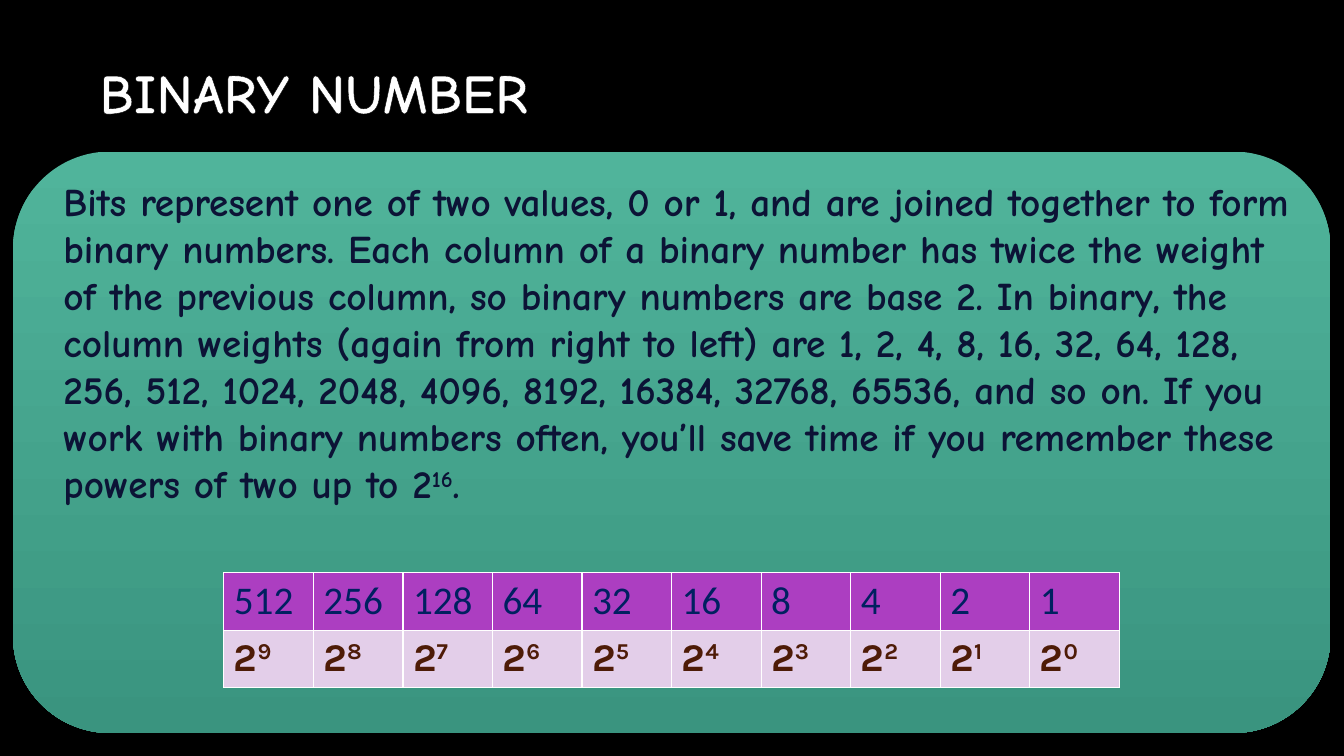
from typing import NamedTuple

from lxml.etree import SubElement
from pptx import Presentation
from pptx.dml.color import RGBColor as Rgb
from pptx.enum.shapes import MSO_SHAPE as Preset
from pptx.enum.text import MSO_ANCHOR as Anchor
from pptx.oxml.ns import qn
from pptx.util import Cm, Pt

COLORS = {
    "black": "000000",
    "white": "FFFFFF",
    "panel_top": "50B49B",
    "panel_bottom": "3A947F",
    "body": "0C1336",
    "weight": "002060",
    "weight_fill": "AC3EC1",
    "power": "4E1B07",
    "power_fill": "E3CEE9",
}
BIT_COUNT = 10
BODY = (
    "Bits represent one of two values, 0 or 1, and are joined together to form "
    "binary numbers. Each column of a binary number has twice the weight of the "
    "previous column, so binary numbers are base 2. In binary, the column weights "
    "(again from right to left) are 1, 2, 4, 8, 16, 32, 64, 128, 256, 512, 1024, "
    "2048, 4096, 8192, 16384, 32768, 65536, and so on. If you work with binary "
    "numbers often, you’ll save time if you remember these powers of two up to 2"
)


class Span(NamedTuple):
    text: str
    raised: bool = False


class Style(NamedTuple):
    font: str
    size: int
    color: str
    bold: bool


class Frame(NamedTuple):
    left: float
    top: float
    width: float
    height: float


class Row(NamedTuple):
    height: float
    fill: str
    style: Style
    cells: list[list[Span]]


TITLE_STYLE = Style("Comic Neue", 40, "white", True)
BODY_STYLE = Style("Comic Neue", 28, "body", True)
WEIGHT_STYLE = Style("Calibri", 28, "weight", False)
POWER_STYLE = Style("Karla", 28, "power", True)


def color(name: str) -> Rgb:
    return Rgb.from_string(COLORS[name])


def lengths(frame: Frame) -> list[Cm]:
    return [Cm(value) for value in frame]


def write(para, spans: list[Span], style: Style) -> None:
    font = para.font
    font.name, font.size, font.bold = style.font, Pt(style.size), style.bold
    font.color.rgb = color(style.color)
    for span in spans:
        run = para.add_run()
        run.text = span.text
        if span.raised:
            run._r.get_or_add_rPr().set("baseline", "30000")


def add_line(parent, tag: str, name: str, width: float) -> None:
    line = SubElement(parent, qn(tag), w=str(Pt(width)))
    SubElement(SubElement(line, qn("a:solidFill")), qn("a:srgbClr"), val=COLORS[name])


def add_panel(page, frame: Frame) -> None:
    panel = page.shapes.add_shape(Preset.ROUNDED_RECTANGLE, *lengths(frame))
    panel.shadow.inherit = False
    panel.line.fill.background()
    panel.fill.gradient()
    panel.fill.gradient_angle = 270
    for stop, name in zip(panel.fill.gradient_stops, ("panel_top", "panel_bottom")):
        stop.color.rgb = color(name)


def add_text(page, frame: Frame, spans: list[Span], style: Style, anchor: Anchor):
    text = page.shapes.add_textbox(*lengths(frame)).text_frame
    text.word_wrap = True
    text.vertical_anchor = anchor
    write(text.paragraphs[0], spans, style)
    return text.paragraphs[0]


def add_grid(page, frame: Frame, rows: list[Row]) -> None:
    grid = page.shapes.add_table(len(rows), BIT_COUNT, *lengths(frame)).table
    grid.first_row = grid.horz_banding = False
    for row_index, row in enumerate(rows):
        grid.rows[row_index].height = Cm(row.height)
        for column, spans in enumerate(row.cells):
            cell = grid.cell(row_index, column)
            write(cell.text_frame.paragraphs[0], spans, row.style)
            for side in ("a:lnL", "a:lnR", "a:lnT", "a:lnB"):
                add_line(cell._tc.get_or_add_tcPr(), side, "white", 1)
            cell.fill.solid()
            cell.fill.fore_color.rgb = color(row.fill)


def main() -> None:
    deck = Presentation()
    deck.slide_width, deck.slide_height = Cm(33.87), Cm(19.05)
    page = deck.slides.add_slide(deck.slide_layouts[6])
    page.background.fill.solid()
    page.background.fill.fore_color.rgb = color("black")

    add_panel(page, Frame(0.33, 3.82, 33.2, 14.65))
    title = add_text(page, Frame(2.26, 0.28, 28.14, 4.04),
                     [Span("BINARY NUMBER")], TITLE_STYLE, Anchor.MIDDLE)
    add_line(title.runs[0]._r.get_or_add_rPr(), "a:ln", "black", 1.06)
    add_text(page, Frame(1.35, 4.34, 31.88, 11.94),
             [Span(BODY), Span("16", True), Span(".")], BODY_STYLE, Anchor.TOP)

    exponents = range(BIT_COUNT - 1, -1, -1)
    weights = [[Span(str(2 ** power))] for power in exponents]
    powers = [[Span("2"), Span(str(power), True)] for power in exponents]
    add_grid(page, Frame(5.64, 14.43, 22.58, 2.87), [
        Row(1.46, "weight_fill", WEIGHT_STYLE, weights),
        Row(1.41, "power_fill", POWER_STYLE, powers),
    ])
    deck.save("out.pptx")


if __name__ == "__main__":
    main()
